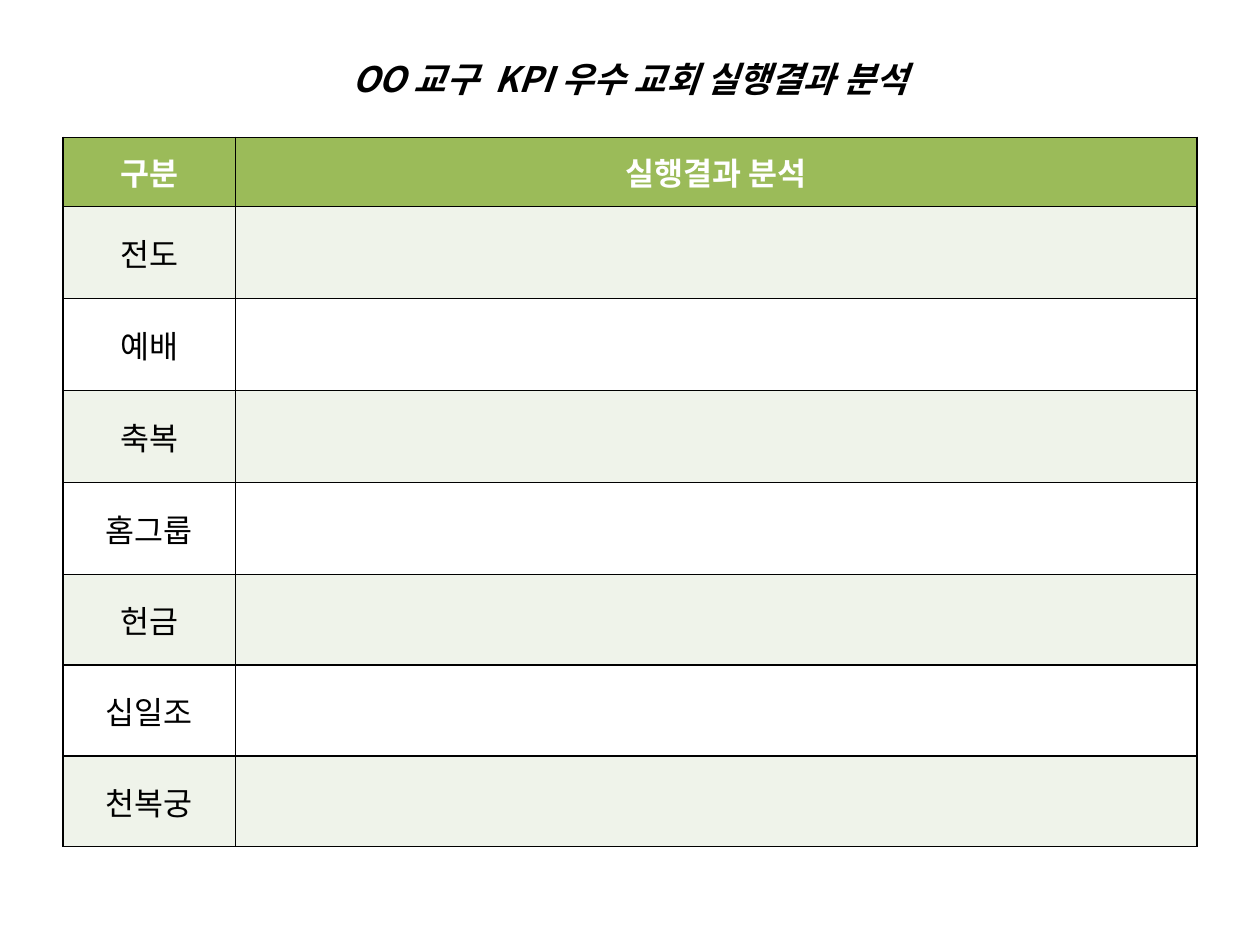
from lxml import etree
from pptx import Presentation
from pptx.dml.color import RGBColor
from pptx.enum import text
from pptx.oxml.ns import qn
from pptx.util import Inches, Pt

FONT = "Noto Sans CJK KR"
BLACK, WHITE, GREEN, PALE = "000000", "FFFFFF", "9BBB59", "EFF3EA"
HEADER = ["구분", "실행결과 분석"]
CATEGORIES = ["전도", "예배", "축복", "홈그룹", "헌금", "십일조", "천복궁"]
COL_WIDTHS = [1.37, 7.63]
ROW_HEIGHTS = [0.55] + [0.73] * 4 + [0.72] * 3


def rgb(color):
    return RGBColor.from_string(color)


def write(tf, words, color, **formats):
    """Put one centred line into a text frame."""
    p = tf.paragraphs[0]
    p.alignment = text.PP_ALIGN.CENTER
    r = p.add_run()
    r.text = words
    for name, value in {"name": FONT, **formats}.items():
        setattr(r.font, name, value)
    r.font.color.rgb = rgb(color)
    # East Asian typeface, used for the Hangul
    etree.SubElement(r.font._element, qn("a:ea"), typeface=FONT)


def style_cell(cell, fill):
    """Border all four sides, then fill; the schema wants this order."""
    tc_pr = cell._tc.get_or_add_tcPr()
    for side in ("a:lnL", "a:lnR", "a:lnT", "a:lnB"):
        ln = etree.SubElement(tc_pr, qn(side), w=str(Pt(1)))
        solid = etree.SubElement(ln, qn("a:solidFill"))
        etree.SubElement(solid, qn("a:srgbClr"), val=BLACK)
    cell.fill.solid()
    cell.fill.fore_color.rgb = rgb(fill)
    cell.vertical_anchor = text.MSO_ANCHOR.MIDDLE


def add_title(s, left, top, width, height):
    tf = s.shapes.add_textbox(left, top, width, height).text_frame
    tf.word_wrap = True
    tf.vertical_anchor = text.MSO_ANCHOR.MIDDLE
    write(tf, "OO 교구  KPI 우수 교회 실행결과 분석", BLACK,
          size=Pt(20), bold=True, italic=True)


def add_analysis_table(s, left, top, width, height):
    rows = [HEADER] + [[category, ""] for category in CATEGORIES]
    table = s.shapes.add_table(len(rows), len(HEADER),
                               left, top, width, height).table
    for col, size in zip(table.columns, COL_WIDTHS):
        col.width = Inches(size)
    for row, size in zip(table.rows, ROW_HEIGHTS):
        row.height = Inches(size)

    # Green header, then alternating pale and white rows
    for i, row in enumerate(rows):
        head = i == 0
        fill = GREEN if head else PALE if i % 2 else WHITE
        for j, words in enumerate(row):
            cell = table.cell(i, j)
            style_cell(cell, fill)
            if words:
                write(cell.text_frame, words, WHITE if head else BLACK,
                      size=Pt(18), bold=head)


def main():
    prs = Presentation()
    prs.slide_width, prs.slide_height = Inches(10), Inches(7.5)
    s = prs.slides.add_slide(prs.slide_layouts[6])
    left, width = Inches(0.5), Inches(9)
    add_title(s, left, Inches(0.31), width, Inches(0.63))
    add_analysis_table(s, left, Inches(1.09), width, Inches(5.6))
    prs.save("out.pptx")


if __name__ == "__main__":
    main()
